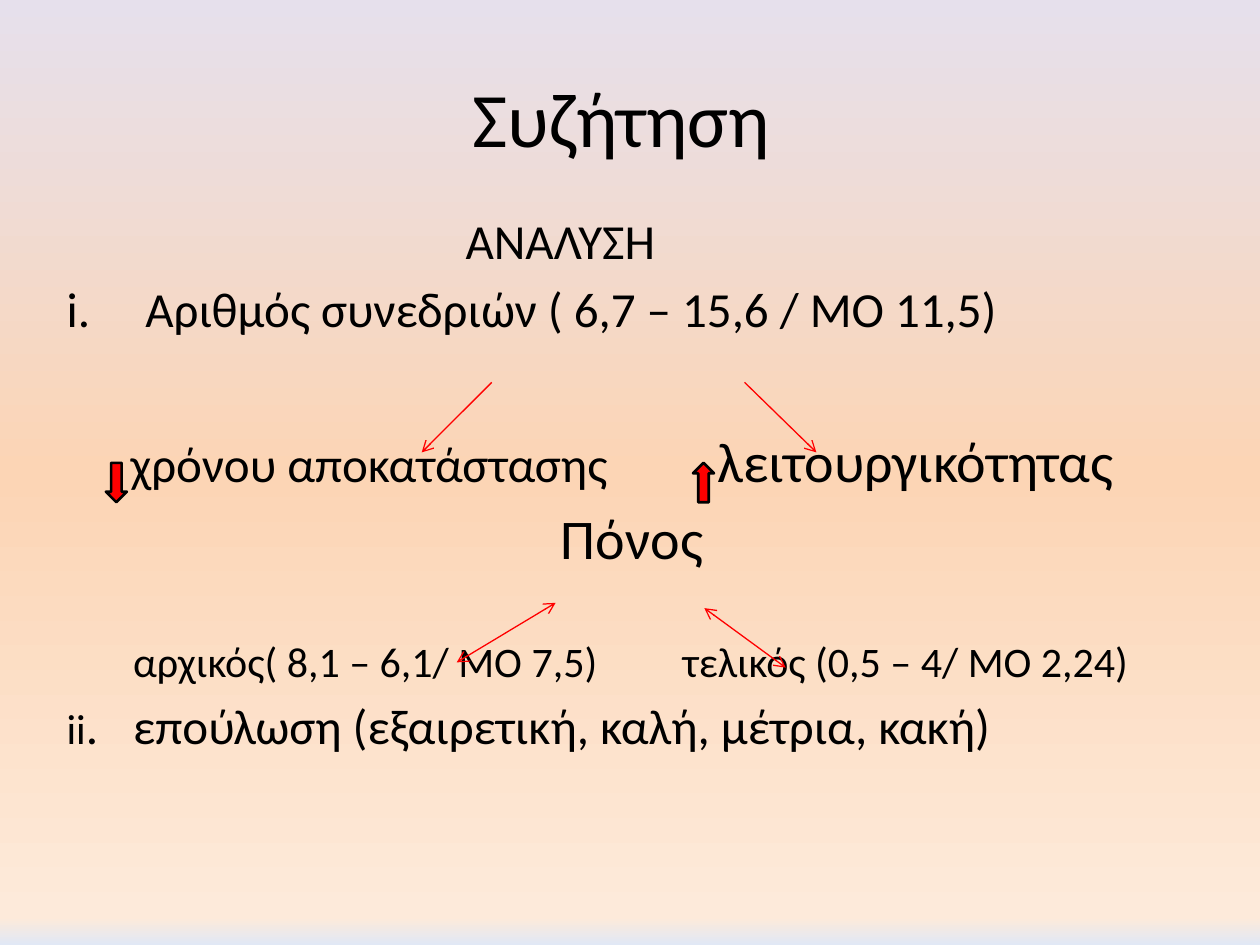
import pptx
import pptx.util
import pptx.dml.color
import pptx.enum.shapes
import pptx.enum.text
import pptx.oxml
import pptx.oxml.ns
from lxml import etree

Pt = pptx.util.Pt
SHAPE = pptx.enum.shapes.MSO_SHAPE
LINK = pptx.enum.shapes.MSO_CONNECTOR
ALIGN = pptx.enum.text.PP_ALIGN
ANCHOR = pptx.enum.text.MSO_ANCHOR
qn = pptx.oxml.ns.qn

FONT = "Calibri"
COLORS = {"text": "000000", "mark": "FF0000", "edge": "000000"}
SKY = [(0, "E6E0EC"), (50, "FCD5B5"), (97, "FDEADA"), (100, "E1E8F5")]

# Each row: space before, tab stops, (text, size) runs
ROWS = [
    (2, [228], [("\tΑΝΑΛΥΣΗ", 28)]),
    (5.6, [], [("Αριθμός συνεδριών ( 6,7 – 15,6 / ΜΟ 11,5)", 28)]),
    (51, [36.5, 372], [("\tχρόνου αποκατάστασης\t", 28), ("λειτουργικότητας", 32)]),
    (5.6, [282.5], [("\tΠόνος", 32)]),
    (37, [38, 352], [("\tαρχικός( 8,1 – 6,1/ ΜΟ 7,5)\tτελικός (0,5 – 4/ ΜΟ 2,24)", 24)]),
    (5.6, [38], [("ii", 24), (".\tεπούλωση (εξαιρετική, καλή, μέτρια, κακή)", 28)]),
]
NUMBERED = 1


def rgb(name):
    return pptx.dml.color.RGBColor.from_string(COLORS[name])


def sub(parent, tag, **attrs):
    return etree.SubElement(parent, qn(tag), attrs)


def paint(slide):
    """Fill the background with the vertical gradient."""
    fill = slide.background.fill
    fill.gradient()
    fill.gradient_angle = 270
    stops = slide.background._cSld.find(".//" + qn("a:gsLst"))
    for stop in list(stops):
        stops.remove(stop)
    for pos, color in SKY:
        stop = sub(stops, "a:gs", pos=str(pos * 1000))
        sub(stop, "a:srgbClr", val=color)


def style(run, size):
    run.font.name = FONT
    run.font.size = Pt(size)
    run.font.color.rgb = rgb("text")


def frame(slide, box):
    text = slide.shapes.add_textbox(*map(Pt, box)).text_frame
    text.word_wrap = True
    return text


def title(slide, box):
    text = frame(slide, box)
    text.vertical_anchor = ANCHOR.MIDDLE
    text.text = "Συζήτηση "
    para = text.paragraphs[0]
    para.alignment = ALIGN.CENTER
    style(para.runs[0], 44)


def body(slide, box):
    text = frame(slide, box)
    for i, (gap, tabs, runs) in enumerate(ROWS):
        para = text.add_paragraph() if i else text.paragraphs[0]
        para.space_before = Pt(gap)
        for words, size in runs:
            run = para.add_run()
            run.text = words
            style(run, size)
        props = para._p.get_or_add_pPr()
        if i == NUMBERED:
            props.set("marL", str(Pt(45)))
            props.set("indent", str(-Pt(45)))
            sub(props, "a:buFont", typeface=FONT)
            sub(props, "a:buAutoNum", type="romanLcPeriod")
        if tabs:
            stops = sub(props, "a:tabLst")
            for pos in tabs:
                sub(stops, "a:tab", pos=str(Pt(pos)), algn="l")


def arrow(slide, start, end, both=False):
    link = slide.shapes.add_connector(LINK.STRAIGHT, *map(Pt, start + end))
    link.line.color.rgb = rgb("mark")
    link.line.width = Pt(0.75)
    line = link.line._get_or_add_ln()
    for tag in ["a:headEnd", "a:tailEnd"] if both else ["a:tailEnd"]:
        sub(line, tag, type="arrow")
    sub(link._element.spPr, "a:effectLst")


def trend(slide, kind, box):
    """Draw a block arrow for a rise or a fall."""
    mark = slide.shapes.add_shape(kind, *map(Pt, box))
    mark.shadow.inherit = False
    mark.fill.solid()
    mark.fill.fore_color.rgb = rgb("mark")
    mark.line.color.rgb = rgb("edge")
    mark.line.width = Pt(1.5)


def marks(slide, left, top):
    """Draw all arrows, measured from the corner of the body."""
    def at(x, y):
        return left + x, top + y

    arrow(slide, at(250, 102), at(210, 142))
    arrow(slide, at(394.5, 102), at(435.5, 142))
    arrow(slide, at(286.5, 228), at(230, 262), both=True)
    arrow(slide, at(371.5, 231), at(418, 265), both=True)
    trend(slide, SHAPE.UP_ARROW, at(365, 148) + (12, 22.5))
    trend(slide, SHAPE.DOWN_ARROW, at(29.5, 148) + (12, 22.5))


def main():
    deck = pptx.Presentation()
    deck.slide_width, deck.slide_height = Pt(720), Pt(540)
    slide = deck.slides.add_slide(deck.slide_layouts[6])
    paint(slide)
    title(slide, (36, 21.5, 648, 90))
    body(slide, (31, 116.5, 648, 374.5))
    marks(slide, 31, 116.5)
    deck.save("out.pptx")


if __name__ == "__main__":
    main()
